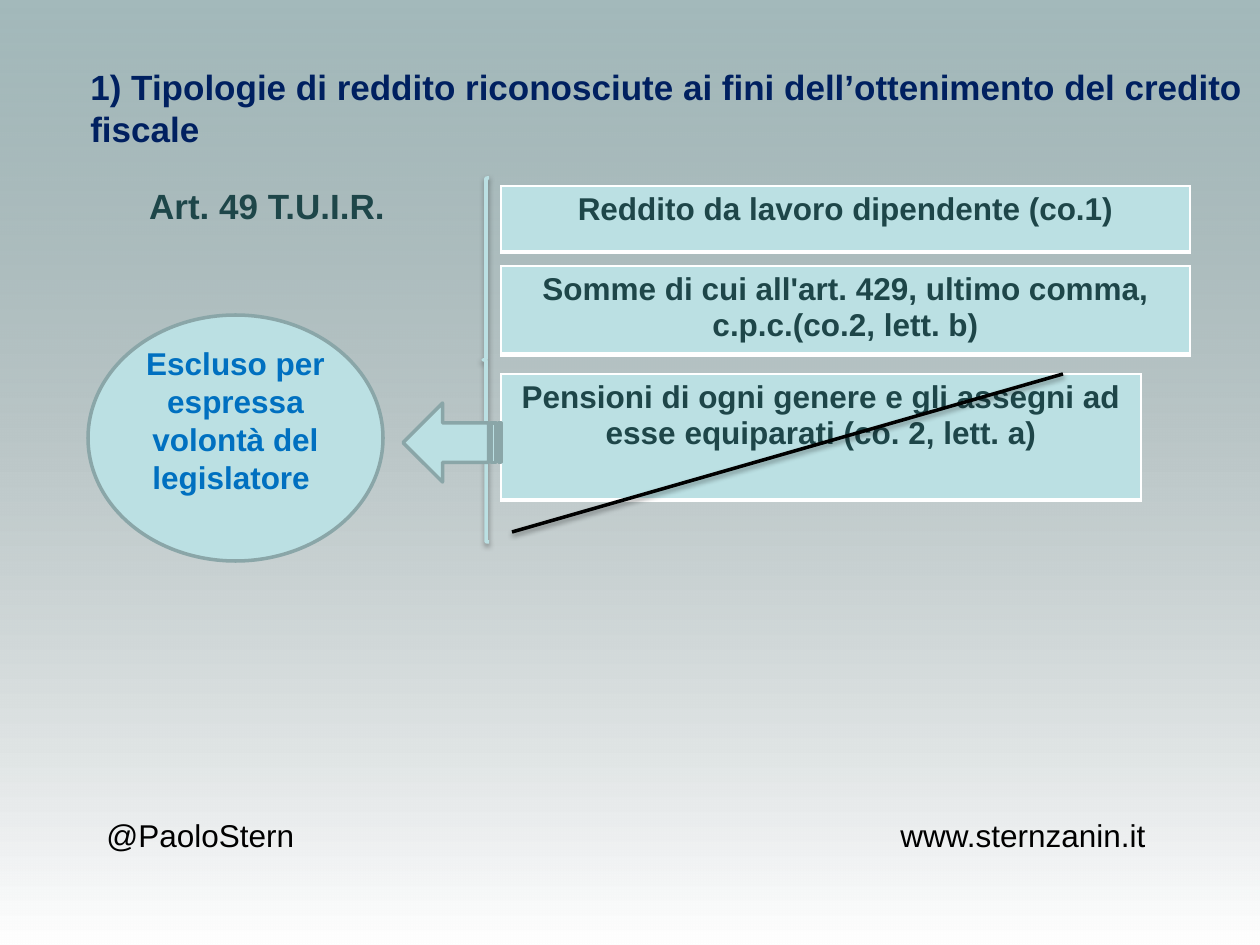
from lxml import etree
from pptx import Presentation
from pptx.dml.color import RGBColor
from pptx.enum.shapes import MSO_CONNECTOR, MSO_SHAPE
from pptx.enum.text import MSO_ANCHOR, MSO_AUTO_SIZE, PP_ALIGN
from pptx.oxml import parse_xml
from pptx.oxml.ns import nsdecls, qn
from pptx.util import Pt

PIXEL = 914400 / 126
LEFT, CENTER = PP_ALIGN.LEFT, PP_ALIGN.CENTER
MIDDLE = MSO_ANCHOR.MIDDLE
GROW = MSO_AUTO_SIZE.SHAPE_TO_FIT_TEXT
STRAIGHT = MSO_CONNECTOR.STRAIGHT
RECTANGLE, ELLIPSE = MSO_SHAPE.RECTANGLE, MSO_SHAPE.OVAL
BRACE, STRIPED_ARROW = MSO_SHAPE.LEFT_BRACE, MSO_SHAPE.STRIPED_RIGHT_ARROW

COLORS = {
    "aqua": "BBE0E3",
    "outline": "8AA6A8",
    "dark": "1E4649",
    "navy": "002060",
    "blue": "0070C0",
    "black": "000000",
    "white": "FFFFFF",
    "gray": "808080",
}
FOOTER = {"size": Pt(18), "bold": False}
HEADING = {"size": Pt(20), "bold": True}
LABEL = {"size": Pt(18), "bold": True}
BORDERS = {"lnL": 1, "lnR": 1, "lnT": 1, "lnB": 3}

INCOME_TYPES = [
    ("Reddito da lavoro dipendente (co.1)", (501, 186, 689, 66)),
    ("Somme di cui all'art. 429, ultimo comma, c.p.c.(co.2, lett. b)",
     (501, 266, 689, 88)),
    ("Pensioni di ogni genere e gli assegni ad esse equiparati (co. 2, lett. a)",
     (501, 374, 640, 126)),
]


def px(*lengths):
    return [round(length * PIXEL) for length in lengths]


def rgb(color):
    return RGBColor.from_string(COLORS[color])


def write(frame, text, style, color, align):
    paragraph = frame.paragraphs[0]
    paragraph.alignment = align
    run = paragraph.add_run()
    run.text = text
    for name, value in {"name": "Arial", **style}.items():
        setattr(run.font, name, value)
    run.font.color.rgb = rgb(color)


def add_text(slide, box, text, style, color, align=LEFT, wrap=True):
    frame = slide.shapes.add_textbox(*px(*box)).text_frame
    frame.word_wrap = wrap
    frame.auto_size = GROW
    write(frame, text, style, color, align)


def set_line(shape, color):
    shape.line.color.rgb = rgb(color)
    shape.line.width = Pt(2)


def add_shape(slide, kind, box, fill=None, line=None):
    shape = slide.shapes.add_shape(kind, *px(*box))
    shape.shadow.inherit = False
    if fill:
        shape.fill.solid()
        shape.fill.fore_color.rgb = rgb(fill)
    else:
        shape.fill.background()
    if line:
        set_line(shape, line)
    else:
        shape.line.fill.background()
    return shape


def add_shadow(shape):
    properties = shape._element.spPr
    effects = properties.find(qn("a:effectLst"))
    if effects is None:
        effects = etree.SubElement(properties, qn("a:effectLst"))
    effects.append(parse_xml(
        f'<a:outerShdw {nsdecls("a")} blurRad="40000" dist="20000" dir="5400000"'
        f' rotWithShape="0"><a:srgbClr val="{COLORS["black"]}">'
        '<a:alpha val="38000"/></a:srgbClr></a:outerShdw>'))


def add_background(slide):
    """Lay a fade from translucent gray to white over the aqua background."""
    slide.background.fill.solid()
    slide.background.fill.fore_color.rgb = rgb("aqua")
    veil = add_shape(slide, RECTANGLE, (0, 0, 1260, 945))
    properties = veil._element.spPr
    gradient = parse_xml(
        f'<a:gradFill {nsdecls("a")} rotWithShape="1"><a:gsLst>'
        f'<a:gs pos="0"><a:srgbClr val="{COLORS["gray"]}">'
        '<a:alpha val="40000"/></a:srgbClr></a:gs>'
        f'<a:gs pos="100000"><a:srgbClr val="{COLORS["white"]}"/></a:gs>'
        '</a:gsLst><a:lin ang="5400000" scaled="0"/></a:gradFill>')
    properties.replace(properties.find(qn("a:noFill")), gradient)


def add_income_table(slide, text, box):
    table = slide.shapes.add_table(1, 1, *px(*box)).table
    cell = table.cell(0, 0)
    properties = cell._tc.get_or_add_tcPr()
    for side, width in BORDERS.items():
        properties.append(parse_xml(
            f'<a:{side} {nsdecls("a")} w="{Pt(width)}"><a:solidFill>'
            f'<a:srgbClr val="{COLORS["white"]}"/></a:solidFill></a:{side}>'))
    cell.fill.solid()
    cell.fill.fore_color.rgb = rgb("aqua")
    write(cell.text_frame, text, LABEL, "dark", CENTER)


def add_strike(slide, start, end):
    strike = slide.shapes.add_connector(STRAIGHT, *px(*start, *end))
    set_line(strike, "black")
    add_shadow(strike)


def add_exclusion(slide):
    arrow = add_shape(slide, STRIPED_ARROW, (403, 403, 98, 79), "aqua", "outline")
    arrow.rotation = 180
    ellipse = add_shape(slide, ELLIPSE, (88, 315, 295, 246), "aqua", "outline")
    frame = ellipse.text_frame
    frame.word_wrap = True
    frame.vertical_anchor = MIDDLE
    frame.margin_bottom = px(42)[0]
    write(frame, "Escluso per espressa volontà del legislatore ", LABEL, "blue", CENTER)


def main():
    presentation = Presentation()
    presentation.slide_width, presentation.slide_height = px(1260, 945)
    slide = presentation.slides.add_slide(presentation.slide_layouts[6])

    add_background(slide)
    add_text(slide, (94, 810, 228, 50), "@PaoloStern", FOOTER, "black")
    add_text(slide, (888, 810, 307, 50), "www.sternzanin.it", FOOTER, "black")
    add_text(slide, (78, 59, 1182, 97),
             "1) Tipologie di reddito riconosciute ai fini dell’ottenimento "
             "del credito fiscale", HEADING, "navy")
    add_text(slide, (136, 178, 262, 55), "Art. 49 T.U.I.R.", HEADING, "dark",
             CENTER, wrap=False)
    for text, box in INCOME_TYPES:
        add_income_table(slide, text, box)
    add_strike(slide, (512, 532), (1063, 374))
    add_shadow(add_shape(slide, BRACE, (483, 178, 6, 364), line="aqua"))
    add_exclusion(slide)
    presentation.save("out.pptx")


if __name__ == "__main__":
    main()
